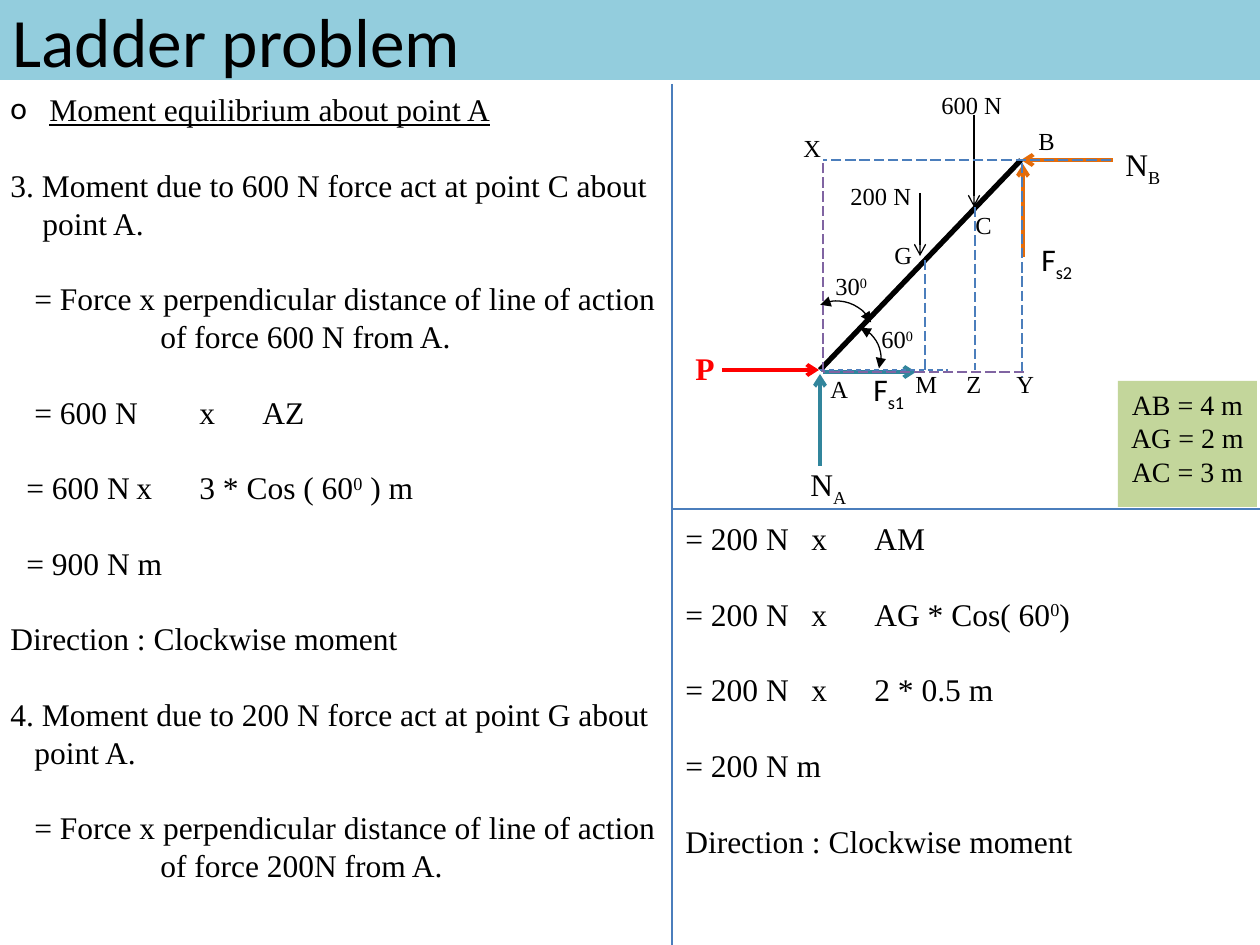
from dataclasses import dataclass

from lxml import etree
from pptx import Presentation, util as u
from pptx.dml.color import RGBColor
from pptx.enum import shapes, text
from pptx.oxml.ns import qn

PX = 914400 / 126
SERIF, SANS = "Times New Roman", "Calibri"
COLORS = {"banner": "93CDDD", "ink": "000000", "push": "FF0000", "wall": "E46C0A",
          "floor": "31859C", "guide": "4B7EBC", "purple": "8064A2", "lengths": "C3D69B"}


@dataclass
class Row:
    """One line of text; pieces after odd bars are raised or lowered."""
    words: str
    indent: int = 0
    gap: bool = False
    bullet: bool = False


def px(length):
    """Turn pixels into EMU."""
    return u.Emu(round(length * PX))


def rgb(name):
    """Look up a named colour."""
    return RGBColor.from_string(COLORS[name])


def sub(parent, tag, **attributes):
    """Append a drawing element."""
    return etree.SubElement(parent, qn(f"a:{tag}"), attributes)


def write_text(frame, rows, size=14, font=SERIF, color="ink", bold=False, align="LEFT",
               shift=30, pitch=None, tabs=()):
    """Fill a text frame with formatted rows."""
    frame.word_wrap = True
    frame.auto_size = text.MSO_AUTO_SIZE.NONE
    for index, row in enumerate(rows):
        line = frame.paragraphs[0] if index == 0 else frame.add_paragraph()
        props = line._p.get_or_add_pPr()
        props.set("marL", str(px(row.indent) if row.bullet else 0))
        props.set("indent", str(px(-row.indent if row.bullet else row.indent)))
        if row.bullet:
            sub(props, "buFont", typeface=SANS)
            sub(props, "buChar", char="o")
        else:
            sub(props, "buNone")
        if "\t" in row.words:
            stops = sub(props, "tabLst")
            for stop in tabs:
                sub(stops, "tab", pos=str(px(stop)), algn="l")
        line.alignment = getattr(text.PP_ALIGN, align)
        if pitch:
            line.line_spacing = u.Pt(pitch)
        if row.gap:
            line.space_before = u.Pt(pitch)
        for order, piece in enumerate(row.words.split("|")):
            run = line.add_run()
            run.text = piece
            run.font.size, run.font.name, run.font.bold = u.Pt(size), font, bold
            run.font.color.rgb = rgb(color)
            run.font.underline = row.bullet
            if order % 2:
                run._r.get_or_add_rPr().set("baseline", str(shift * 1000))


def add_text(slide, box, rows, **style):
    """Add a text box."""
    holder = slide.shapes.add_textbox(*map(px, box))
    write_text(holder.text_frame, rows, **style)


def add_line(slide, ends, color="ink", width=0.75, dash=None, arrow=False):
    """Add a straight line, dashed or with an arrow at its end."""
    line = slide.shapes.add_connector(shapes.MSO_CONNECTOR.STRAIGHT, *map(px, ends))
    line.line.color.rgb = rgb(color)
    line.line.width = u.Pt(width)
    outline = line.line._get_or_add_ln()
    if dash:
        sub(outline, "prstDash", val=dash)
    if arrow:
        sub(outline, "tailEnd", type="arrow")
    sub(line._element.spPr, "effectLst")


def add_angle(slide, box, rotation):
    """Add a quarter arc with a triangle at both ends."""
    arc = slide.shapes.add_shape(shapes.MSO_SHAPE.ARC, *map(px, box))
    arc.rotation = rotation
    arc.shadow.inherit = False
    arc.fill.background()
    arc.line.color.rgb = rgb("ink")
    arc.line.width = u.Pt(0.75)
    for end in ("headEnd", "tailEnd"):
        sub(arc.line._get_or_add_ln(), end, type="triangle")


def add_title(slide):
    """Place the title on its banner."""
    title = slide.shapes.title
    title.left, title.top, title.width, title.height = map(px, (0, 0, 1260, 80))
    title.fill.solid()
    title.fill.fore_color.rgb = rgb("banner")
    title.text_frame.vertical_anchor = text.MSO_ANCHOR.MIDDLE
    write_text(title.text_frame, [Row("Ladder problem")], size=39.6, font=SANS)


def add_lengths(slide):
    """Add the panel of known lengths."""
    panel = slide.shapes.add_shape(shapes.MSO_SHAPE.RECTANGLE, *map(px, (1118, 381, 139, 126)))
    panel.shadow.inherit = False
    panel.fill.solid()
    panel.fill.fore_color.rgb = rgb("lengths")
    panel.line.fill.background()
    panel.text_frame.vertical_anchor = text.MSO_ANCHOR.TOP
    rows = [Row(words) for words in ("AB = 4 m", "AG = 2 m", "AC = 3 m")]
    write_text(panel.text_frame, rows, size=16, align="CENTER", pitch=19.2)


def add_diagram(slide):
    """Draw the ladder with its forces, guides, angles and labels."""
    add_line(slide, (820, 370, 1021, 160), width=3)
    add_angle(slide, (818, 326, 63, 63), 20.2)
    add_angle(slide, (799, 301, 76, 76), 334)

    for ends in ((920, 193, 920, 256), (974, 115, 974, 207)):
        add_line(slide, ends, arrow=True)
    for color, ends in (("push", (722, 370, 819, 370)), ("wall", (1113, 160, 1021, 160)),
                        ("wall", (1023, 257, 1023, 164)), ("floor", (820, 466, 820, 374)),
                        ("floor", (823, 372, 916, 372))):
        add_line(slide, ends, color, width=2.25, arrow=True)

    add_line(slide, (820, 370, 948, 370), "guide", dash="dash")
    for color, ends in (("guide", (1022, 163, 1022, 377)), ("guide", (1111, 160, 823, 160)),
                        ("guide", (975, 207, 975, 370)), ("guide", (925, 260, 925, 373)),
                        ("purple", (823, 372, 823, 160)), ("purple", (1024, 372, 823, 372))):
        add_line(slide, ends, color, dash="lgDash")

    for label, left, top in (("60|0", 869, 318), ("200 N", 838, 175), ("600 N", 929, 84),
                             ("A", 818, 368), ("B", 1026, 120), ("C", 963, 204),
                             ("G", 882, 234), ("X", 791, 127), ("30|0", 823, 265),
                             ("Y", 1004, 363), ("Z", 954, 363), ("M", 903, 363)):
        add_text(slide, (left, top, 103, 43), [Row(label)])
    for label, left, top, style in (
            ("P", 683, 343, {"color": "push", "bold": True}),
            ("N|B", 1113, 139, {}), ("N|A", 798, 459, {}),
            ("F|s2", 1029, 234, {"font": SANS}), ("F|s1", 861, 364, {"font": SANS})):
        add_text(slide, (left, top, 103, 50), [Row(label)], size=18, shift=-25, **style)


def add_working(slide):
    """Write the moment calculations in both columns."""
    force = "= Force x perpendicular distance of line of action"
    direction = Row("Direction : Clockwise moment", gap=True)
    left = [
        Row("Moment equilibrium about point A", 39, bullet=True),
        Row("3. Moment due to 600 N force act at point C about", gap=True),
        Row("point A.", 32),
        Row(force, 24, True),
        Row("of force 600 N from A.", 150),
        Row("= 600 N\tx\tAZ", 24, True),
        Row("= 600 N\tx\t3 * Cos ( 60|0| ) m", 16, True),
        Row("= 900 N m", 16, True),
        direction,
        Row("4. Moment due to 200 N force act at point G about", gap=True),
        Row("point A.", 24),
        Row(force, 24, True),
        Row("of force 200N from A.", 150)]
    right = [
        Row("= 200 N\tx\tAM"),
        Row("= 200 N\tx\tAG * Cos( 60|0|)", gap=True),
        Row("= 200 N\tx\t2 * 0.5 m", gap=True),
        Row("= 200 N m", gap=True),
        direction]
    add_text(slide, (-2, 84, 680, 860), left, size=18, pitch=21.6, tabs=(150, 190))
    add_text(slide, (673, 513, 466, 365), right, size=18, pitch=21.6, tabs=(119, 149))


def main():
    """Build the slide and save it."""
    deck = Presentation()
    deck.slide_width, deck.slide_height = px(1260), px(945)
    slide = deck.slides.add_slide(deck.slide_layouts[5])
    add_title(slide)
    add_diagram(slide)
    add_lengths(slide)
    for divider in ((672, 84, 672, 945), (672, 509, 1260, 509)):
        add_line(slide, divider, "guide")
    add_working(slide)
    deck.save("out.pptx")


if __name__ == "__main__":
    main()
